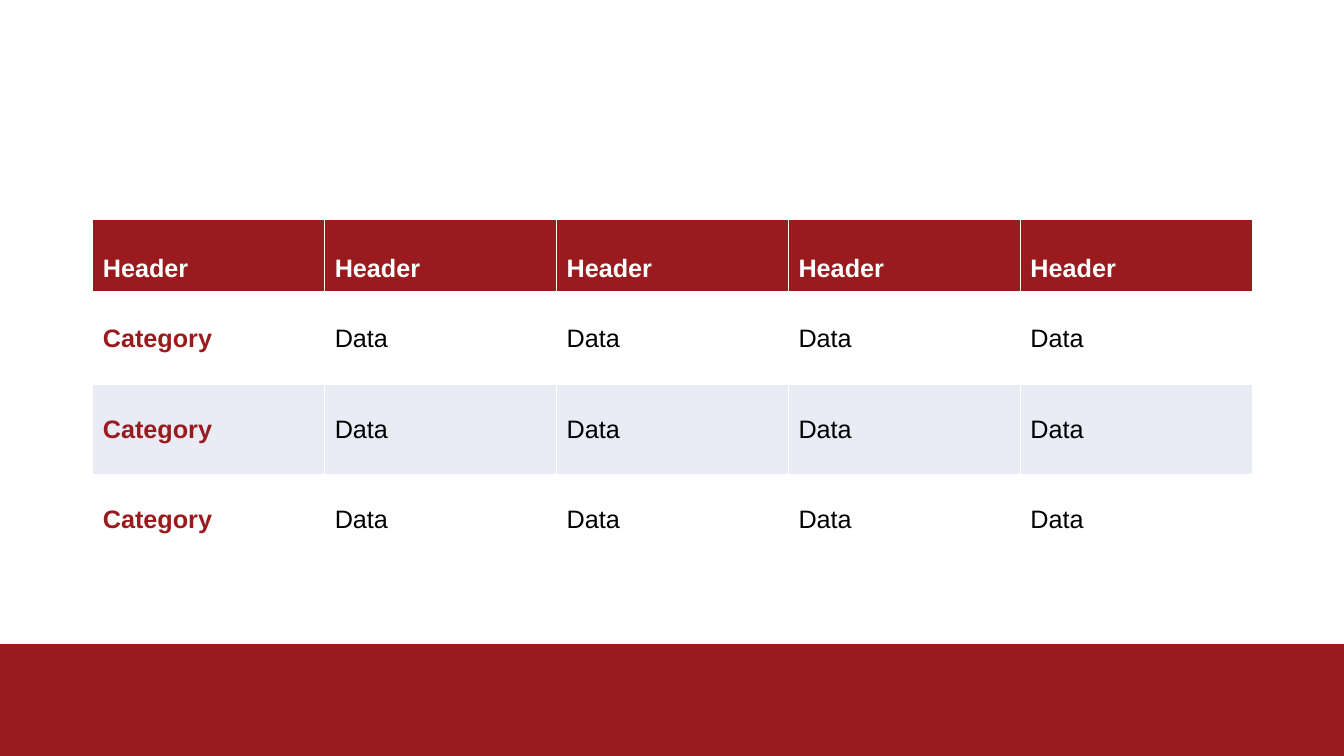
from lxml.etree import SubElement
from pptx import Presentation
from pptx.dml.color import RGBColor
from pptx.enum.shapes import MSO_SHAPE as Shape
from pptx.enum.text import MSO_ANCHOR as Anchor
from pptx.oxml.ns import qn
from pptx.util import Inches, Pt

CRIMSON = RGBColor(0x99, 0x1B, 0x1E)
WHITE = RGBColor(0xFF, 0xFF, 0xFF)
BLACK = RGBColor(0x00, 0x00, 0x00)
PALE_BLUE = RGBColor(0xE9, 0xEB, 0xF5)

COLUMN_COUNT = 5
ROWS = [["Header"] * COLUMN_COUNT] + [["Category"] + ["Data"] * (COLUMN_COUNT - 1)] * 3


class SlideBuilder:
    """Holds the style and the slide; lengths are in inches."""

    font_name = "Arial"
    font_size = Pt(18)
    width, height = 13.33, 7.5
    column_width = 2.3
    header_height, row_height = 0.73, 0.9

    def __init__(self, presentation):
        presentation.slide_width = Inches(self.width)
        presentation.slide_height = Inches(self.height)
        self.slide = presentation.slides.add_slide(presentation.slide_layouts[6])

    def footer_band(self, top, color):
        band = self.slide.shapes.add_shape(
            Shape.RECTANGLE, 0, Inches(top), Inches(self.width), Inches(self.height - top))
        band.shadow.inherit = False
        band.fill.solid()
        band.fill.fore_color.rgb = color
        band.line.fill.background()

    def table(self, left, top, rows):
        columns = len(rows[0])
        height = self.header_height + self.row_height * (len(rows) - 1)
        table = self.slide.shapes.add_table(
            len(rows), columns, Inches(left), Inches(top),
            Inches(self.column_width * columns), Inches(height)).table
        for column in table.columns:
            column.width = Inches(self.column_width)
        for row_index, texts in enumerate(rows):
            table.rows[row_index].height = Inches(
                self.row_height if row_index else self.header_height)
            for column_index, text in enumerate(texts):
                self.cell(table.cell(row_index, column_index), text, row_index, column_index)

    def cell(self, cell, text, row_index, column_index):
        is_header = row_index == 0
        is_category = column_index == 0 and not is_header
        # Header cells sit on the bottom edge, body cells in the middle
        cell.vertical_anchor = Anchor.BOTTOM if is_header else Anchor.MIDDLE
        if is_header:
            cell.margin_bottom = Inches(0.1)
        self.borders(cell, top=3 if row_index == 1 else 1, bottom=3 if is_header else 1)
        cell.fill.solid()
        band_color = WHITE if row_index % 2 else PALE_BLUE
        cell.fill.fore_color.rgb = CRIMSON if is_header else band_color
        body_color = CRIMSON if is_category else BLACK
        self.run(cell.text_frame.paragraphs[0], text,
                 WHITE if is_header else body_color, is_header or is_category)

    def borders(self, cell, top, bottom):
        properties = cell._tc.get_or_add_tcPr()
        for side, points in (("L", 1), ("R", 1), ("T", top), ("B", bottom)):
            line = SubElement(properties, qn(f"a:ln{side}"), w=str(Pt(points)))
            fill = SubElement(line, qn("a:solidFill"))
            SubElement(fill, qn("a:srgbClr"), val=str(WHITE))

    def run(self, paragraph, text, color, bold):
        run = paragraph.add_run()
        run.text = text
        run.font.name = self.font_name
        run.font.size = self.font_size
        run.font.bold = bold
        run.font.color.rgb = color


def main():
    presentation = Presentation()
    builder = SlideBuilder(presentation)
    # Footer
    builder.footer_band(6.39, CRIMSON)
    # Data table
    builder.table(0.92, 2.18, ROWS)
    presentation.save("out.pptx")


if __name__ == "__main__":
    main()
